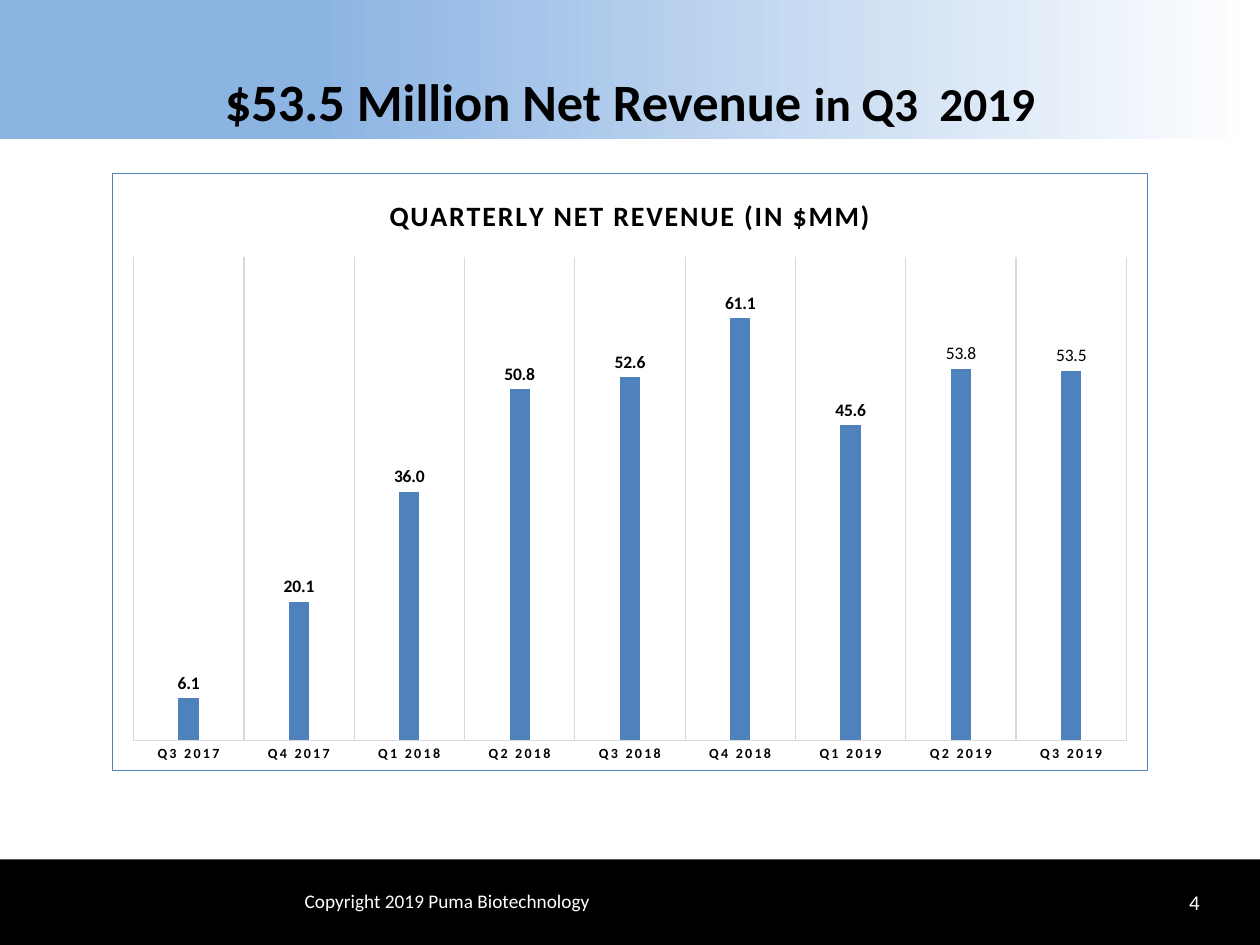
from lxml import etree
from pptx import Presentation
from pptx.chart.data import CategoryChartData
from pptx.dml.color import RGBColor
from pptx.enum.chart import XL_CHART_TYPE, XL_LABEL_POSITION, XL_TICK_MARK
from pptx.enum.shapes import MSO_SHAPE
from pptx.enum.text import MSO_ANCHOR, PP_ALIGN
from pptx.oxml import parse_xml
from pptx.oxml.ns import nsdecls, qn
from pptx.util import Inches, Pt

BLACK = RGBColor(0x00, 0x00, 0x00)
WHITE = RGBColor(0xFF, 0xFF, 0xFF)
SKY = RGBColor(0x8C, 0xB4, 0xE3)
BLUE = RGBColor(0x4F, 0x81, 0xBD)
GRAY = RGBColor(0xD9, 0xD9, 0xD9)


def style_font(font, size, color, bold=False):
    font.name = "Calibri"
    font.size = Pt(size)
    font.bold = bold
    font.color.rgb = color


def add_footer_text(page, text, left, top, width, height, size, align, anchor):
    box = page.shapes.add_textbox(Inches(left), Inches(top), Inches(width), Inches(height))
    frame = box.text_frame
    frame.word_wrap = True
    frame.vertical_anchor = anchor
    frame.text = text
    paragraph = frame.paragraphs[0]
    paragraph.alignment = align
    style_font(paragraph.runs[0].font, size, WHITE)


deck = Presentation()
deck.slide_width = Inches(10)
deck.slide_height = Inches(7.5)
page = deck.slides.add_slide(deck.slide_layouts[5])

title = page.shapes.title
title.left, title.top = Inches(0), Inches(0)
title.width, title.height = Inches(10), Inches(1.1)
title.fill.gradient()
title.fill.gradient_angle = 0
for stop, position, color in zip(title.fill.gradient_stops, (0.25, 1), (SKY, WHITE)):
    stop.position = position
    stop.color.rgb = color
frame = title.text_frame
frame.vertical_anchor = MSO_ANCHOR.BOTTOM
frame.margin_left = frame.margin_right = Inches(0.5)
frame.margin_top = frame.margin_bottom = Inches(0.05)
paragraph = frame.paragraphs[0]
paragraph.alignment = PP_ALIGN.CENTER
for text, size in (("$53.5 Million Net Revenue ", 30), ("in Q3  2019", 27)):
    span = paragraph.add_run()
    span.text = text
    style_font(span.font, size, BLACK, True)

footer = page.shapes.add_shape(MSO_SHAPE.RECTANGLE, Inches(0), Inches(6.82), Inches(10), Inches(0.68))
footer.shadow.inherit = False
footer.fill.solid()
footer.fill.fore_color.rgb = BLACK
footer.line.fill.background()
add_footer_text(page, "4", 8.92, 6.96, 0.7, 0.4, 12, PP_ALIGN.RIGHT, MSO_ANCHOR.MIDDLE)
add_footer_text(page, "Copyright 2019 Puma Biotechnology", 2.32, 7.01, 2.54, 0.29, 11,
                PP_ALIGN.LEFT, MSO_ANCHOR.TOP)

revenue = CategoryChartData(number_format="0.0")
revenue.categories = ["Q3 2017", "Q4 2017", "Q1 2018", "Q2 2018", "Q3 2018",
                      "Q4 2018", "Q1 2019", "Q2 2019", "Q3 2019"]
revenue.add_series("Series 1", (6.1, 20.1, 36, 50.8, 52.6, 61.1, 45.6, 53.8, 53.5))
chart = page.shapes.add_chart(XL_CHART_TYPE.COLUMN_CLUSTERED, Inches(0.89), Inches(1.37),
                              Inches(8.22), Inches(4.75), revenue).chart
style_font(chart.font, 10, BLACK)
chart.has_legend = False
chart.has_title = True
chart.chart_title.include_in_layout = False
heading = chart.chart_title.text_frame
heading.text = "QUARTERLY NET REVENUE (IN $MM)"
heading_run = heading.paragraphs[0].runs[0]
style_font(heading_run.font, 16, BLACK, True)
heading_run._r.get_or_add_rPr().set("spc", "120")

quarters = chart.category_axis
quarters.major_tick_mark = XL_TICK_MARK.NONE
quarters.has_major_gridlines = True
for line in (quarters.format.line, quarters.major_gridlines.format.line):
    line.color.rgb = GRAY
    line.width = Pt(0.75)
style_font(quarters.tick_labels.font, 8, BLACK, True)
quarters._element.find(".//" + qn("a:defRPr")).set("spc", "120")

amounts = chart.value_axis
amounts.minimum_scale = 0
amounts.maximum_scale = 70
amounts.has_major_gridlines = False
amounts.visible = False

plot = chart.plots[0]
plot.gap_width = 444
plot.overlap = -90
plot.vary_by_categories = False
series = plot.series[0]
series.format.fill.solid()
series.format.fill.fore_color.rgb = BLUE
labels = series.data_labels
labels.show_value = True
labels.position = XL_LABEL_POSITION.OUTSIDE_END
labels.number_format = "0.0"
labels.number_format_is_linked = False
style_font(labels.font, 10, BLACK, True)
for index in (7, 8):
    label = series.points[index].data_label
    style_font(label.font, 10, BLACK)
    label.position = XL_LABEL_POSITION.OUTSIDE_END

plot_area = chart._chartSpace.find(".//" + qn("c:plotArea"))
for old_layout in plot_area.findall(qn("c:layout")):
    plot_area.remove(old_layout)
layout = parse_xml(f"<c:layout {nsdecls('c')}><c:manualLayout/></c:layout>")
for tag, value in (("layoutTarget", "inner"), ("xMode", "edge"), ("yMode", "edge"),
                   ("x", "0.02"), ("y", "0.14"), ("w", "0.96"), ("h", "0.81")):
    etree.SubElement(layout[0], qn("c:" + tag)).set("val", value)
plot_area.insert(0, layout)

border = parse_xml(
    f'<c:spPr {nsdecls("c", "a")}><a:solidFill><a:srgbClr val="{WHITE}"/></a:solidFill>'
    f'<a:ln w="{Pt(0.75)}"><a:solidFill><a:srgbClr val="{BLUE}"/></a:solidFill></a:ln></c:spPr>')
chart._chartSpace.find(qn("c:chart")).addnext(border)

deck.save("out.pptx")
